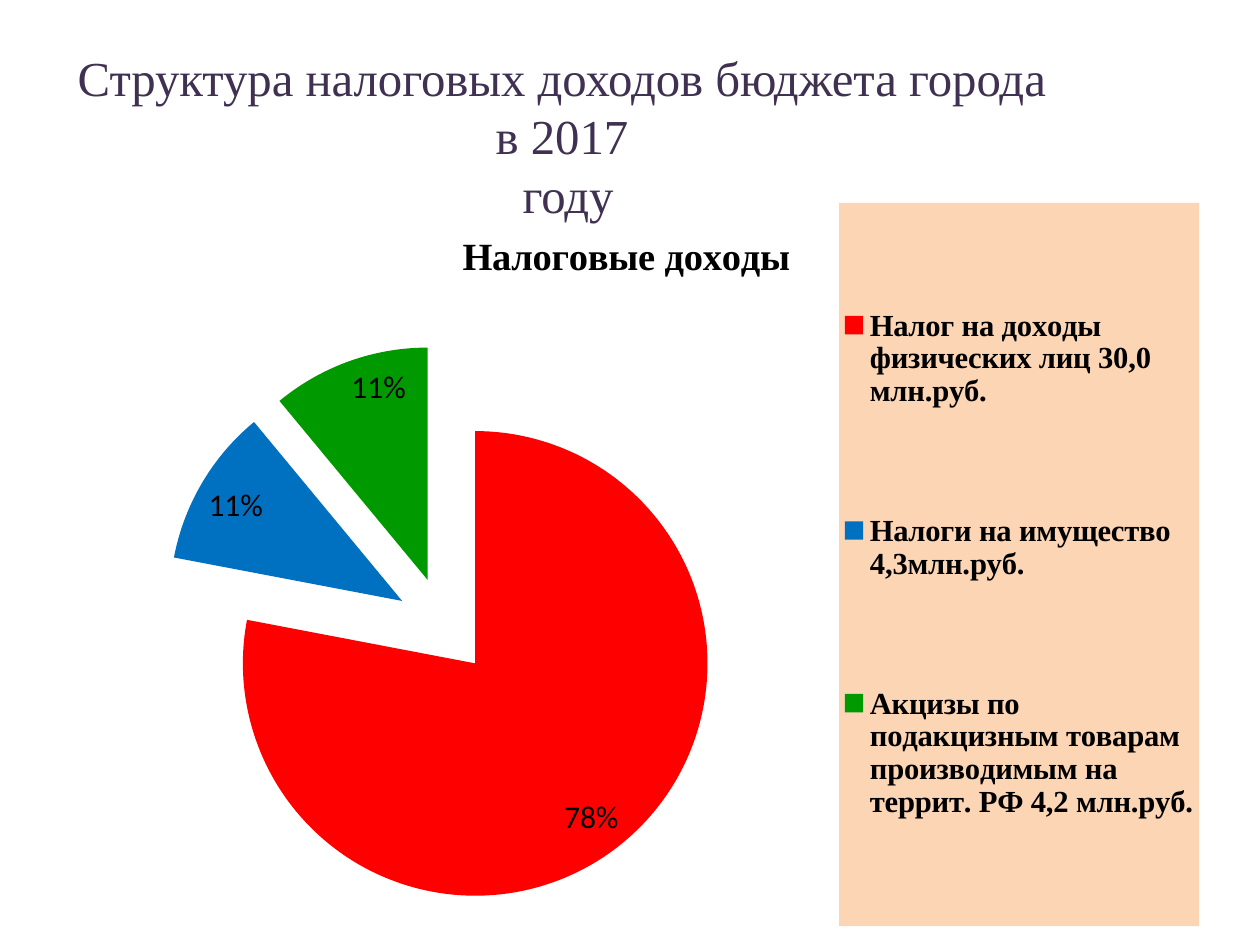
"""Build a slide with an exploded pie chart of the city's tax revenue."""
import dataclasses

import lxml.etree
import pptx
import pptx.chart.data
import pptx.dml.color
import pptx.enum.chart
import pptx.enum.text
import pptx.oxml
import pptx.oxml.ns
import pptx.util

Inches = pptx.util.Inches
Pt = pptx.util.Pt
qn = pptx.oxml.ns.qn


@dataclasses.dataclass(frozen=True)
class Theme:
    serif: str = "Times New Roman"
    sans: str = "Calibri"
    heading: str = "403152"
    text: str = "000000"
    legend_fill: str = "FCD5B5"
    heading_pt: float = 27.9
    chart_title_pt: float = 22
    legend_pt: float = 17.5
    label_pt: float = 18
    explosion: int = 21


@dataclasses.dataclass(frozen=True)
class Tax:
    name: str
    share: int
    color: str


@dataclasses.dataclass(frozen=True)
class Frame:
    x: float
    y: float
    w: float = 0
    h: float = 0


THEME = Theme()
CHART_TITLE = "Налоговые доходы"
TAXES = [
    Tax("Налог на доходы физических лиц 30,0 млн.руб.", 78, "FF0000"),
    Tax("Налоги на имущество 4,3млн.руб.", 11, "0070C0"),
    Tax("Акцизы по подакцизным товарам производимым на террит. РФ 4,2 млн.руб.", 11, "009900"),
]


def rgb(value: str) -> pptx.dml.color.RGBColor:
    return pptx.dml.color.RGBColor.from_string(value)


def set_font(font, name: str, size: float, color: str, bold: bool = False) -> None:
    font.name = name
    font.size = Pt(size)
    font.bold = bold
    font.color.rgb = rgb(color)


def place(parent, index: int, frame: Frame, inner: bool = False) -> None:
    for old in parent.findall(qn("c:layout")):
        parent.remove(old)
    layout = lxml.etree.Element(qn("c:layout"))
    manual = lxml.etree.SubElement(layout, qn("c:manualLayout"))
    values = {"layoutTarget": "inner"} if inner else {}
    values.update(xMode="edge", yMode="edge", x=frame.x, y=frame.y)
    if frame.w:
        values.update(w=frame.w, h=frame.h)
    for tag, value in values.items():
        lxml.etree.SubElement(manual, qn(f"c:{tag}")).set("val", str(value))
    parent.insert(index, layout)


def add_heading(slide) -> None:
    sp = slide.shapes.add_textbox(Inches(0.5), Inches(0.7), Inches(7.92), Inches(1.41))
    tf = sp.text_frame
    tf.word_wrap = True
    tf.vertical_anchor = pptx.enum.text.MSO_ANCHOR.MIDDLE
    tf.margin_bottom = Inches(0.71)
    p = tf.paragraphs[0]
    p.alignment = pptx.enum.text.PP_ALIGN.CENTER
    for i, text in enumerate(("Структура налоговых доходов бюджета города в 2017", " году")):
        if i:
            p.add_line_break()
        r = p.add_run()
        r.text = text
        set_font(r.font, THEME.serif, THEME.heading_pt, THEME.heading)


def style_title(chart) -> None:
    chart.has_title = True
    title = chart.chart_title
    r = title.text_frame.paragraphs[0].add_run()
    r.text = CHART_TITLE
    set_font(r.font, THEME.serif, THEME.chart_title_pt, THEME.text, True)
    title.include_in_layout = False
    place(title._element, 1, Frame(0.35, 0.03))


def style_legend(chart) -> None:
    chart.has_legend = True
    legend = chart.legend
    legend.position = pptx.enum.chart.XL_LEGEND_POSITION.RIGHT
    legend.include_in_layout = False
    set_font(legend.font, THEME.serif, THEME.legend_pt, THEME.text, True)
    place(legend._element, 1, Frame(0.68, 0, 0.31, 1))
    sp_pr = lxml.etree.Element(qn("c:spPr"))
    fill = lxml.etree.SubElement(sp_pr, qn("a:solidFill"))
    lxml.etree.SubElement(fill, qn("a:srgbClr")).set("val", THEME.legend_fill)
    legend._element.find(qn("c:txPr")).addprevious(sp_pr)


def style_slices(plot) -> None:
    plot.vary_by_categories = True
    series = plot.series[0]
    for i, tax in enumerate(TAXES):
        fill = series.points[i].format.fill
        fill.solid()
        fill.fore_color.rgb = rgb(tax.color)
    for point in series._element.findall(qn("c:dPt")):
        explosion = lxml.etree.Element(qn("c:explosion"))
        explosion.set("val", str(THEME.explosion))
        point.find(qn("c:spPr")).addprevious(explosion)
    plot.has_data_labels = True
    labels = plot.data_labels
    labels.show_percentage = True
    labels.show_value = False
    labels.number_format = "0%"
    labels.number_format_is_linked = False
    labels.position = pptx.enum.chart.XL_LABEL_POSITION.INSIDE_END
    set_font(labels.font, THEME.sans, THEME.label_pt, THEME.text)


def add_pie(slide) -> None:
    data = pptx.chart.data.CategoryChartData()
    data.categories = [tax.name for tax in TAXES]
    data.add_series(CHART_TITLE, [tax.share for tax in TAXES])
    chart = slide.shapes.add_chart(
        pptx.enum.chart.XL_CHART_TYPE.PIE,
        Inches(0.39), Inches(1.61), Inches(9.22), Inches(5.74), data,
    ).chart
    set_font(chart.font, THEME.sans, THEME.label_pt, THEME.text)
    style_title(chart)
    style_legend(chart)
    style_slices(chart.plots[0])
    plot_area = chart._chartSpace.find(qn("c:chart")).find(qn("c:plotArea"))
    place(plot_area, 0, Frame(0.14, 0.26, 0.4, 0.65), inner=True)


def main() -> None:
    prs = pptx.Presentation()
    prs.slide_width, prs.slide_height = Inches(10), Inches(7.5)
    slide = prs.slides.add_slide(prs.slide_layouts[6])
    add_heading(slide)
    add_pie(slide)
    prs.save("out.pptx")


if __name__ == "__main__":
    main()
